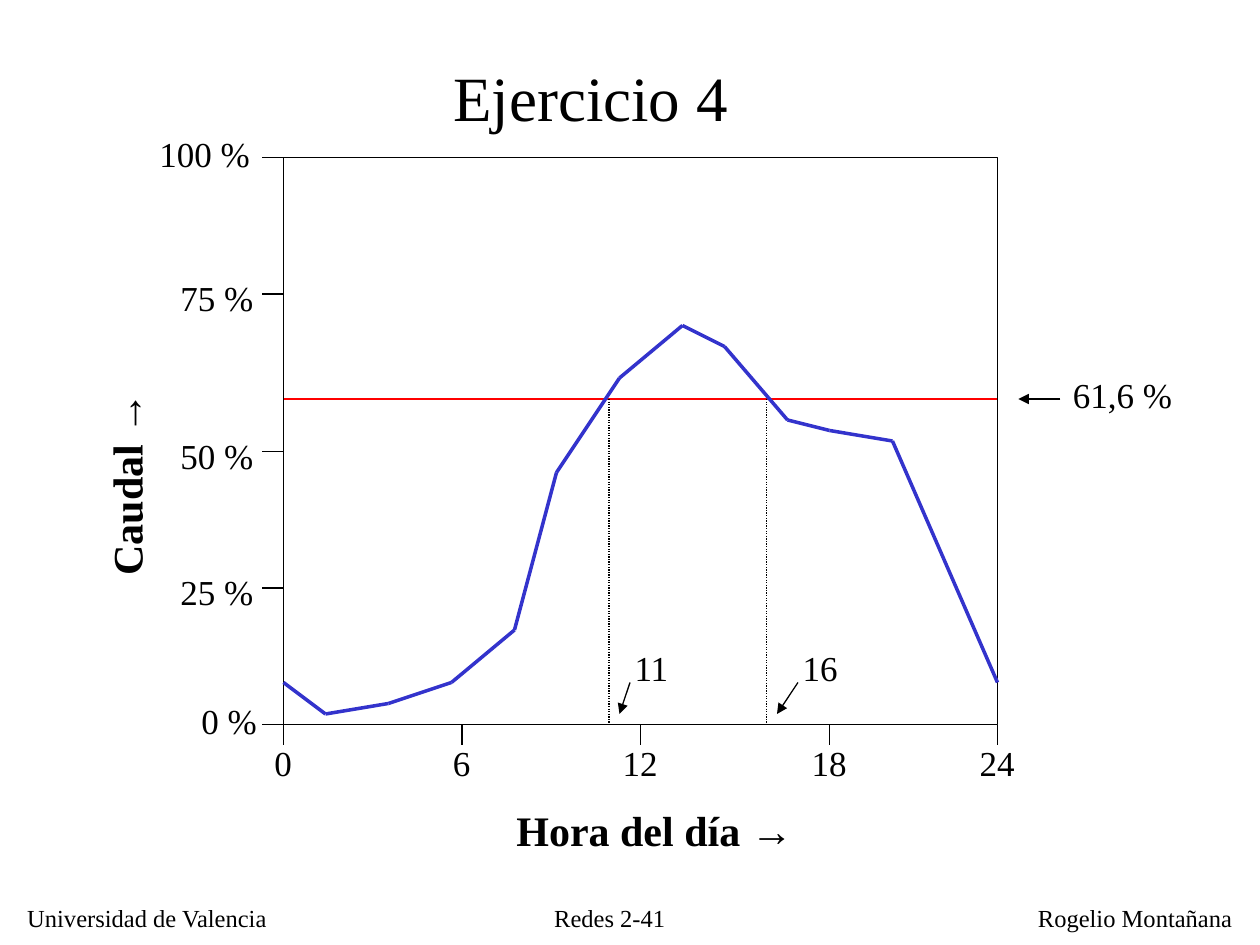
import itertools

import lxml.etree
import pptx
import pptx.dml.color
import pptx.enum.dml
import pptx.enum.shapes
import pptx.enum.text
import pptx.oxml.ns
import pptx.util

Pt = pptx.util.Pt
ALIGN = pptx.enum.text.PP_ALIGN
COLORS = {"text": "000000", "plot": "FFFFFF", "limit": "FF0000", "flow": "3333CC"}
FONT = "Times New Roman"
LABEL_HEIGHT = 31

# Offsets in points from the top left corner of the plot
HOUR_TICKS = [("0", 0), ("6", 102), ("12", 204), ("18", 312), ("24", 408)]
# Label, tick height, label left, label width, label top relative to the tick
FLOW_TICKS = [("100 %", 0, -78, 66, -18), ("75 %", 78, -66, 56, -13.5),
              ("50 %", 168, -66, 56, -13.5), ("25 %", 246, -66, 56, -13.5),
              ("0 %", 324, -54, 46, -18)]
FLOW_CURVE = [(0, 300), (24, 318), (60, 312), (96, 300), (132, 270), (156, 180),
              (192, 126), (228, 96), (252, 108), (288, 150), (312, 156),
              (348, 162), (408, 300)]
LIMIT = 138
# Label, dotted line, label left, arrow start, arrow end
CROSSINGS = [("11", 186, 193.5, 198, 192), ("16", 276, 289.5, 294, 282)]


def rgb(name):
    return pptx.dml.color.RGBColor.from_string(COLORS[name])


def add_xml(parent, tag, **attributes):
    return lxml.etree.SubElement(parent, pptx.oxml.ns.qn(tag), attributes)


def add_text(slide, text, left, top, width, height, size, bold=False,
             align=ALIGN.LEFT, wrap=False, half_space=False):
    shape = slide.shapes.add_textbox(Pt(left), Pt(top), Pt(width), Pt(height))
    shape.text_frame.word_wrap = wrap
    paragraph = shape.text_frame.paragraphs[0]
    paragraph.text = text
    paragraph.alignment = align
    if half_space:  # space before of half a line
        space = add_xml(paragraph._p.get_or_add_pPr(), "a:spcBef")
        add_xml(space, "a:spcPct", val="50000")
    font = paragraph.font
    font.name, font.size, font.bold = FONT, Pt(size), bold
    font.color.rgb = rgb("text")
    return shape


def add_line(shapes, x1, y1, x2, y2, color="text", weight=0.75, dotted=False, arrow=False):
    connector = shapes.add_connector(pptx.enum.shapes.MSO_CONNECTOR.STRAIGHT,
                                     Pt(x1), Pt(y1), Pt(x2), Pt(y2))
    connector.line.color.rgb = rgb(color)
    connector.line.width = Pt(weight)
    if dotted:
        connector.line.dash_style = pptx.enum.dml.MSO_LINE.ROUND_DOT
    if arrow:
        add_xml(connector.line._get_or_add_ln(), "a:tailEnd", type="triangle")
    add_xml(connector._element.spPr, "a:effectLst")


def add_footer(slide, left, top, width, height):
    add_text(slide, "Redes 2-41", left + 294.5, top, 91, height, 14,
             align=ALIGN.CENTER, wrap=True)
    add_text(slide, "Universidad de Valencia", left, top, 160, height, 14, wrap=True)
    add_text(slide, "Rogelio Montañana", left + width - 132, top, 132, height, 14,
             wrap=True)


def add_axes(slide, left, top, width, height):
    frame = slide.shapes.add_shape(pptx.enum.shapes.MSO_SHAPE.RECTANGLE,
                                   Pt(left), Pt(top), Pt(width), Pt(height))
    frame.shadow.inherit = False
    frame.fill.solid()
    frame.fill.fore_color.rgb = rgb("plot")
    frame.line.color.rgb = rgb("text")
    frame.line.width = Pt(0.75)

    # Axis titles
    flow_title = add_text(slide, "Caudal →", left - 156, top + 162, 132, 36, 24,
                          bold=True, wrap=True, half_space=True)
    flow_title.rotation = 270
    add_text(slide, "Hora del día →", left + 126, top + height + 42, 192, 36, 24,
             bold=True, wrap=True, half_space=True)

    # Ticks and their labels
    bottom = top + height
    for label, offset in HOUR_TICKS:
        x = left + offset
        label_width = 14.5 + 10 * len(label)
        add_line(slide.shapes, x, bottom, x, bottom + 12)
        add_text(slide, label, x - label_width / 2, bottom + 6, label_width,
                 LABEL_HEIGHT, 20)
    for label, offset, label_left, label_width, shift in FLOW_TICKS:
        y = top + offset
        add_line(slide.shapes, left, y, left - 12, y)
        add_text(slide, label, left + label_left, y + shift, label_width,
                 LABEL_HEIGHT, 20)


def add_curves(slide, left, top, width, height):
    limit_y = top + LIMIT
    add_line(slide.shapes, left, limit_y, left + width, limit_y, "limit", 1.5)

    # Flow over the day
    curve = slide.shapes.add_group_shape()
    for (x1, y1), (x2, y2) in itertools.pairwise(FLOW_CURVE):
        add_line(curve.shapes, left + x1, top + y1, left + x2, top + y2, "flow", 2)

    # Hours at which the flow crosses the limit
    for label, x, label_left, arrow_from, arrow_to in CROSSINGS:
        add_line(slide.shapes, left + x, limit_y, left + x, top + height, dotted=True)
        add_text(slide, label, left + label_left, top + 276, 34.5, LABEL_HEIGHT, 20)
        add_line(slide.shapes, left + arrow_from, top + 300,
                 left + arrow_to, top + 318, arrow=True)

    # Limit value
    right = left + width
    add_text(slide, "61,6 %", right + 36, limit_y - 18, 71, LABEL_HEIGHT, 20)
    add_line(slide.shapes, right + 36, limit_y, right + 12, limit_y, arrow=True)


def main():
    presentation = pptx.Presentation()
    presentation.slide_width, presentation.slide_height = Pt(720), Pt(540)
    slide = presentation.slides.add_slide(presentation.slide_layouts[6])
    plot = (162, 90, 408, 324)
    add_footer(slide, 8.5, 512.5, 709.5, 24)
    add_axes(slide, *plot)
    add_text(slide, "Ejercicio 4", 252, 30, 186, 50, 36, wrap=True, half_space=True)
    add_curves(slide, *plot)
    presentation.save("out.pptx")


if __name__ == "__main__":
    main()
